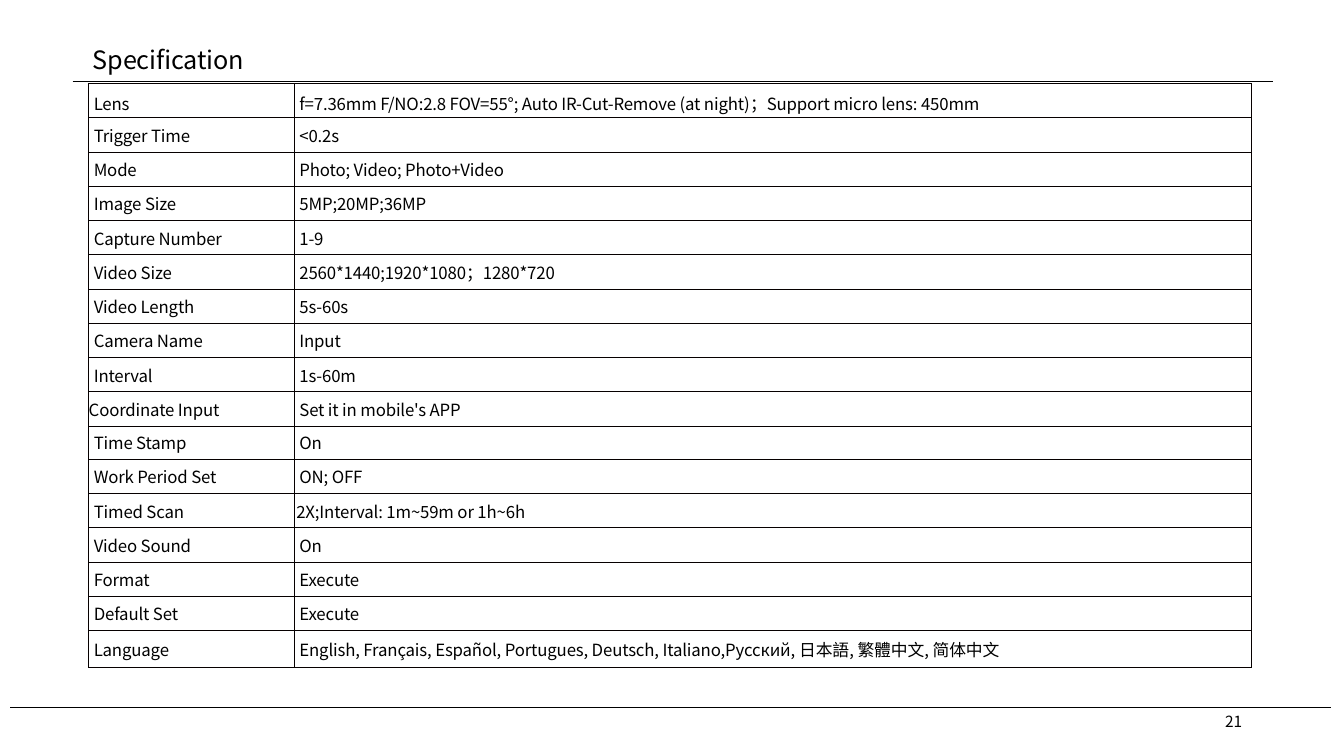
from pptx import Presentation
from pptx import util as u
from pptx.dml.color import RGBColor
from pptx.enum import shapes, text
from pptx.oxml import ns
from lxml import etree

# Content
TITLE = "Specification"
PAGE = "21"
SPECS = [
    ("Lens", "f=7.36mm F/NO:2.8 FOV=55°; Auto IR-Cut-Remove (at night)；Support micro lens: 450mm"),
    ("Trigger Time", "<0.2s"),
    ("Mode", "Photo; Video; Photo+Video"),
    ("Image Size", "5MP;20MP;36MP"),
    ("Capture Number", "1-9"),
    ("Video Size", "2560*1440;1920*1080；1280*720"),
    ("Video Length", "5s-60s"),
    ("Camera Name", "Input"),
    ("Interval", "1s-60m"),
    ("Coordinate Input", "Set it in mobile's APP"),
    ("Time Stamp", "On"),
    ("Work Period Set", "ON; OFF"),
    ("Timed Scan", "2X;Interval: 1m~59m or 1h~6h"),
    ("Video Sound", "On"),
    ("Format", "Execute"),
    ("Default Set", "Execute"),
    ("Language", "English, Français, Español, Portugues, Deutsch, Italiano,Pусский, 日本語, 繁體中文, 简体中文"),
]

# Style and layout, in inches
FONT = "Noto Sans CJK SC"
BLACK = RGBColor(0, 0, 0)
BORDER = RGBColor(0x06, 0, 0)
COLUMNS = (2.04, 9.49)
ROW, ROW_HEIGHTS = 0.34, {"Time Stamp": 0.33, "Language": 0.37}
TOP, TOP_INSETS = 0.05, {"Lens": 0.07, "Time Stamp": 0.04, "Language": 0.06}
LEFT, LEFT_INSETS = 0.05, {"Coordinate Input": 0, SPECS[12][1]: 0.02}
RULES = [(0.72, 12.63, 0.81), (0.1, 13.2, 7.02)]


def write(tf, words, size, spacing=0):
    p = tf.paragraphs[0]
    r = p.add_run()
    r.text = words
    p.alignment = text.PP_ALIGN.LEFT
    p.line_spacing = 1.0
    p.space_before = u.Pt(0)
    for font in (p.font, r.font):
        font.size = u.Pt(size)
        font.name = FONT
        font.color.rgb = BLACK
    rPr = r._r.get_or_add_rPr()
    rPr.set("spc", str(spacing))
    etree.SubElement(rPr, ns.qn("a:ea"), typeface=FONT)


def set_insets(box, left, top):
    box.margin_left, box.margin_top = u.Inches(left), u.Inches(top)
    box.margin_right = box.margin_bottom = 0
    box.vertical_anchor = text.MSO_ANCHOR.TOP


def add_borders(cell):
    tcPr = cell._tc.get_or_add_tcPr()
    for i, side in enumerate(("lnL", "lnR", "lnT", "lnB")):
        ln = etree.Element(ns.qn("a:" + side), w=str(u.Pt(1)))
        fill = etree.SubElement(ln, ns.qn("a:solidFill"))
        etree.SubElement(fill, ns.qn("a:srgbClr"), val=str(BORDER))
        tcPr.insert(i, ln)


prs = Presentation()
prs.slide_width, prs.slide_height = u.Inches(13.33), u.Inches(7.5)
s = prs.slides.add_slide(prs.slide_layouts[5])

# Title
title = s.shapes.title
title.left, title.top = u.Inches(0.91), u.Inches(0.43)
title.width, title.height = u.Inches(1.8), u.Inches(0.33)
set_insets(title.text_frame, 0.01, 0.01)
title.text_frame.auto_size = text.MSO_AUTO_SIZE.NONE
title.text_frame.word_wrap = False
write(title.text_frame, TITLE, 18, -10)

# Header and footer rules
for x1, x2, y in RULES:
    rule = s.shapes.add_connector(shapes.MSO_CONNECTOR.STRAIGHT,
                                  u.Inches(x1), u.Inches(y), u.Inches(x2), u.Inches(y))
    rule.line.color.rgb = BLACK
    rule.line.width = u.Pt(0.6)
    etree.SubElement(rule._element.spPr, ns.qn("a:effectLst"))

# Specification table
heights = [ROW_HEIGHTS.get(name, ROW) for name, _ in SPECS]
table = s.shapes.add_table(len(SPECS), len(COLUMNS), u.Inches(0.88), u.Inches(0.83),
                           u.Inches(sum(COLUMNS)), u.Inches(sum(heights))).table
table.first_row = table.horz_banding = False
for column, width in zip(table.columns, COLUMNS):
    column.width = u.Inches(width)
for row, height, spec in zip(table.rows, heights, SPECS):
    row.height = u.Inches(height)
    for cell, words in zip(row.cells, spec):
        set_insets(cell, LEFT_INSETS.get(words, LEFT), TOP_INSETS.get(spec[0], TOP))
        write(cell.text_frame, words, 12, -10)
        cell.fill.background()
        add_borders(cell)

# Page number
number = s.shapes.add_textbox(u.Inches(12.12), u.Inches(7.02), u.Inches(0.25), u.Inches(0.22))
set_insets(number.text_frame, 0.03, 0.04)
number.text_frame.word_wrap = True
write(number.text_frame, PAGE, 11)

prs.save("out.pptx")
